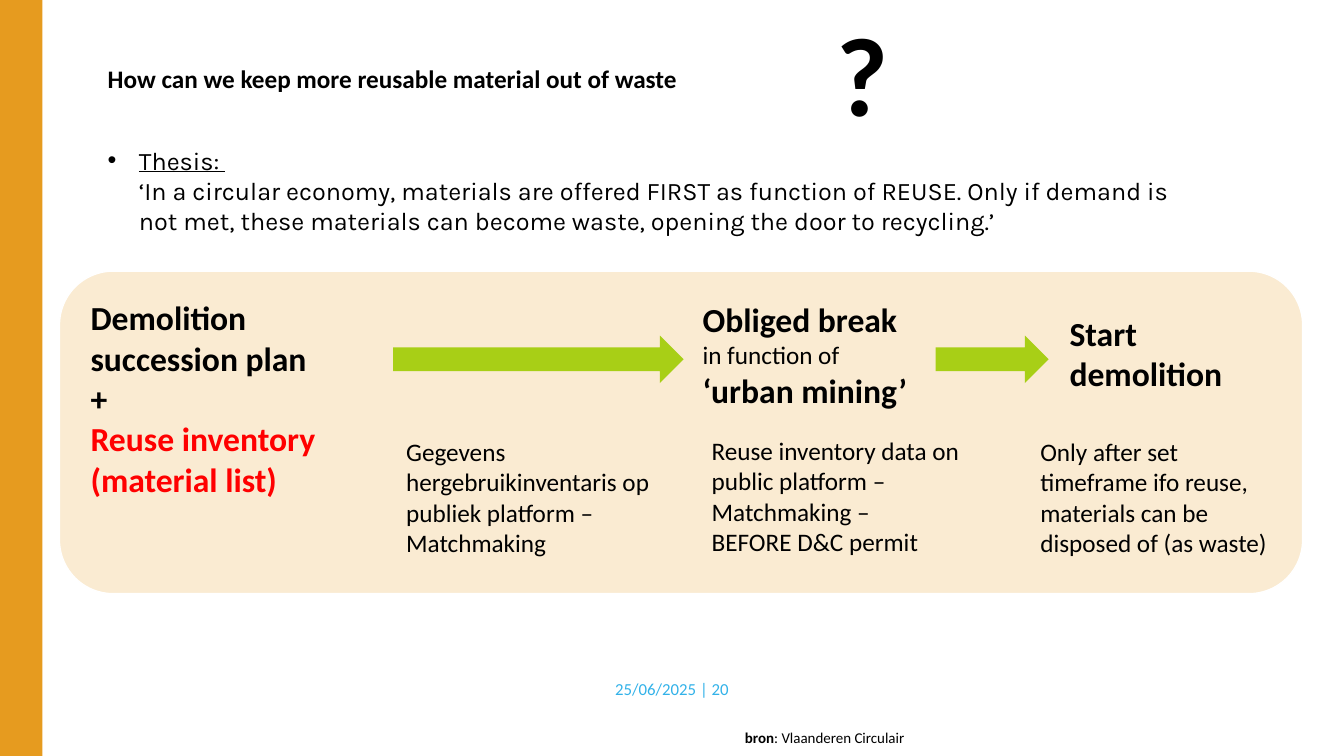
from dataclasses import dataclass

from lxml.etree import SubElement
from pptx import Presentation
from pptx.dml.color import RGBColor
from pptx.enum.shapes import MSO_SHAPE as Geo
from pptx.enum.text import MSO_ANCHOR as Anchor, PP_ALIGN as Align
from pptx.oxml.ns import qn
from pptx.slide import Slide
from pptx.util import Pt

PX = 9144
INK = RGBColor(0, 0, 0)
WHITE = RGBColor(0xFF, 0xFF, 0xFF)
AMBER = RGBColor(0xE6, 0x9B, 0x1F)
GREEN = RGBColor(0xA8, 0xCF, 0x16)
RED = RGBColor(0xFF, 0, 0)
SKY = RGBColor(0x32, 0xB2, 0xE9)


@dataclass
class Run:
    """A stretch of text and what sets it apart from its paragraph."""
    text: str
    size: float | None = None
    bold: bool | None = None
    under: bool | None = None
    color: RGBColor | None = None


@dataclass
class Box:
    """A text box with its place, paragraphs and shared font."""
    place: tuple[int, int, int, int]
    paras: list[list[Run]]
    size: float = 18
    bold: bool = False
    color: RGBColor = INK
    face: str = "Calibri"
    align: Align = Align.LEFT
    anchor: Anchor = Anchor.TOP
    wrap: bool = True
    bullet: int = 0


@dataclass
class Block:
    """A filled preset shape."""
    place: tuple[int, int, int, int]
    geo: Geo
    fill: RGBColor
    alpha: int = 100
    line: RGBColor | None = None


BLOCKS = [
    Block((0, 0, 42, 750), Geo.RECTANGLE, AMBER),
    Block((59, 269, 1233, 320), Geo.ROUNDED_RECTANGLE, AMBER, 20, WHITE),
    Block((390, 333, 288, 47), Geo.RIGHT_ARROW, GREEN),
    Block((928, 333, 112, 47), Geo.RIGHT_ARROW, GREEN),
]

BOXES = [
    Box((513, 662, 307, 42), [[Run("25/06/2025 | 20")]], 12, color=SKY,
        align=Align.CENTER, anchor=Anchor.MIDDLE),
    Box((729, 718, 181, 28),
        [[Run("bron", bold=True), Run(": Vlaanderen Circulair")]],
        10.7, wrap=False),
    Box((97, 58, 844, 40),
        [[Run("How can we keep more reusable material out of waste")]],
        bold=True, align=Align.JUSTIFY),
    Box((820, 0, 108, 145), [[Run("?")]], 80, True, align=Align.JUSTIFY),
    Box((97, 139, 1092, 131),
        [[Run("Thesis: \n", under=True),
          Run("‘In a circular economy, materials are offered FIRST as "
              "function of REUSE. Only if demand is not met, these materials "
              "can become waste, opening the door to recycling.’")]],
        face="Karla", bullet=31),
    Box((80, 290, 310, 212),
        [[Run("Demolition succession plan\n+\n"),
          Run("Reuse inventory", color=RED)],
         [Run("(material list)", color=RED)]], 24, True),
    Box((687, 292, 307, 121),
        [[Run("Obliged break\n"), Run("in function of", 18, False)],
         [Run("‘urban mining’")]], 24, True),
    Box((1051, 305, 203, 91), [[Run("Start demolition")]], 24, True),
    Box((393, 428, 266, 131),
        [[Run("Gegevens hergebruikinventaris op publiek platform – \n"
              "Matchmaking")]]),
    Box((696, 427, 266, 131),
        [[Run("Reuse inventory data on public platform – Matchmaking – \n"
              "BEFORE D&C permit")]]),
    Box((1022, 428, 266, 131),
        [[Run("Only after set timeframe ifo reuse, materials can be "
              "disposed of (as waste)")]]),
]


def emu(place: tuple[int, int, int, int]) -> list[int]:
    """Turn px lengths into EMU."""
    return [n * PX for n in place]


def draw_block(slide: Slide, block: Block) -> None:
    """Draw a filled shape."""
    shape = slide.shapes.add_shape(block.geo, *emu(block.place))
    shape.shadow.inherit = False
    shape.fill.solid()
    shape.fill.fore_color.rgb = block.fill
    if block.alpha < 100:
        tint = shape.fill._xPr.find(".//" + qn("a:srgbClr"))
        SubElement(tint, qn("a:alpha"), val=str(block.alpha * 1000))
    if block.line is None:
        shape.line.fill.background()
    else:
        shape.line.color.rgb = block.line
        shape.line.width = Pt(1)


def add_run(para, run: Run) -> None:
    """Add a run, with a line break at each newline."""
    for i, part in enumerate(run.text.split("\n")):
        if i:
            para.add_line_break()
        if not part:
            continue
        piece = para.add_run()
        piece.text = part
        font = piece.font
        if run.size is not None:
            font.size = Pt(run.size)
        if run.bold is not None:
            font.bold = run.bold
        if run.under is not None:
            font.underline = run.under
        if run.color is not None:
            font.color.rgb = run.color


def draw_box(slide: Slide, box: Box) -> None:
    """Draw a text box."""
    frame = slide.shapes.add_textbox(*emu(box.place)).text_frame
    frame.word_wrap = box.wrap
    frame.vertical_anchor = box.anchor
    for i, runs in enumerate(box.paras):
        para = frame.add_paragraph() if i else frame.paragraphs[0]
        para.alignment = box.align
        if box.bullet:
            props = para._p.get_or_add_pPr()
            props.set("marL", str(box.bullet * PX))
            props.set("indent", str(-box.bullet * PX))
            SubElement(props, qn("a:buFont"), typeface="Arial")
            SubElement(props, qn("a:buChar"), char="•")
        font = para.font
        font.name = box.face
        font.size = Pt(box.size)
        font.bold = box.bold
        font.color.rgb = box.color
        for run in runs:
            add_run(para, run)


def main() -> None:
    """Build the slide and save it."""
    deck = Presentation()
    deck.slide_width, deck.slide_height = 1333 * PX, 750 * PX
    slide = deck.slides.add_slide(deck.slide_layouts[6])
    for block in BLOCKS:
        draw_block(slide, block)
    for box in BOXES:
        draw_box(slide, box)
    deck.save("out.pptx")


if __name__ == "__main__":
    main()
